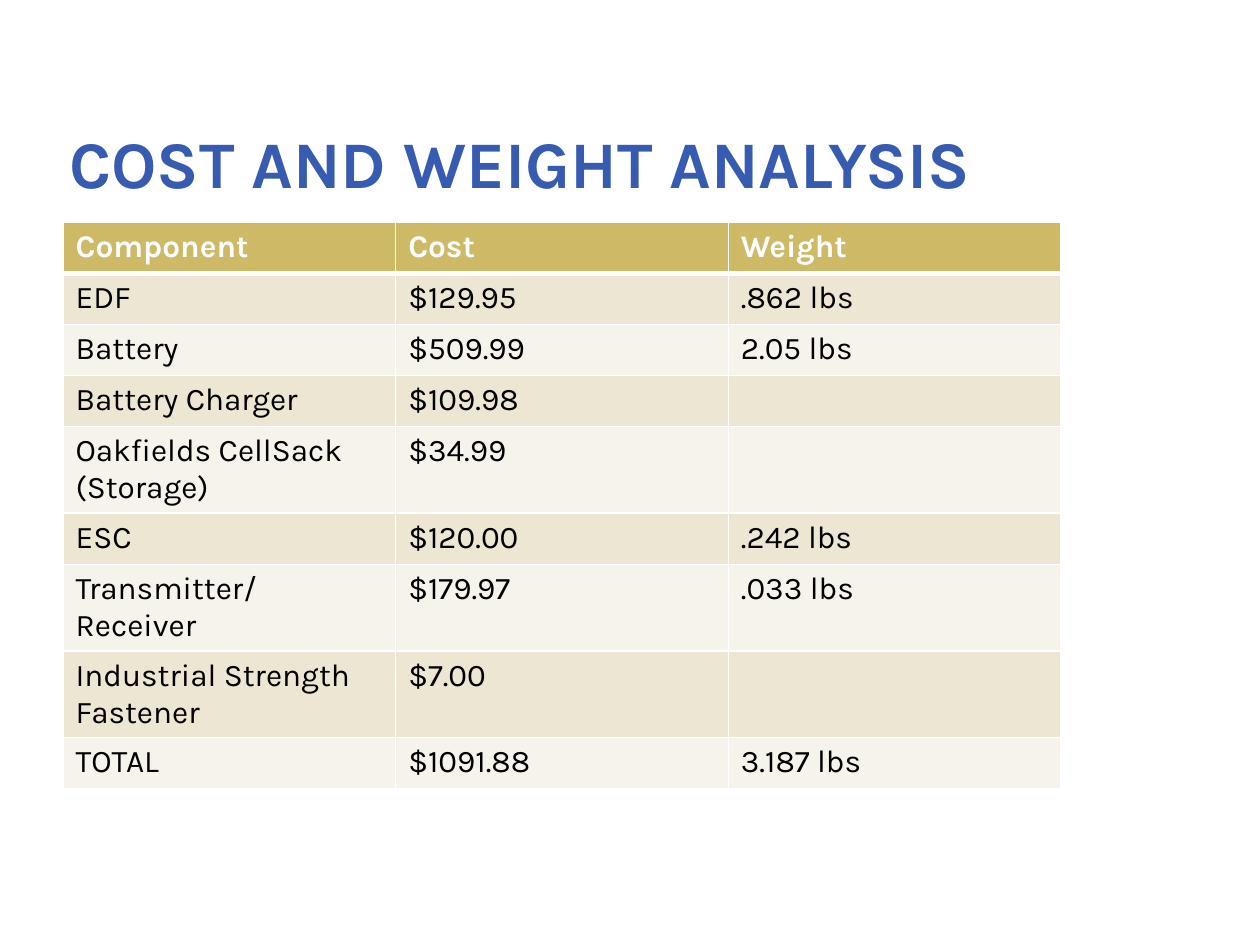
"""Build the cost and weight analysis slide."""
from lxml.etree import SubElement
from pptx import Presentation
from pptx.dml.color import RGBColor
from pptx.enum.text import MSO_ANCHOR as Anchor, MSO_AUTO_SIZE as AutoSize, PP_ALIGN as Align
from pptx.oxml.ns import qn
from pptx.util import Cm, Pt


def color(value):
    return RGBColor.from_string(value)


def write(frame, text, size=18, fill="000000", bold=False):
    para = frame.paragraphs[0]
    para.alignment = Align.LEFT
    span = para.add_run()
    span.text = text
    span.font.name = "Karla"
    span.font.size = Pt(size)
    span.font.bold = bold
    span.font.color.rgb = color(fill)


deck = Presentation()
deck.slide_width, deck.slide_height = Cm(25.4), Cm(19.05)
page = deck.slides.add_slide(deck.slide_layouts[5])

title = page.shapes.title
title.left, title.top, title.width, title.height = Cm(1.27), Cm(0.89), Cm(20.12), Cm(3.18)
frame = title.text_frame
frame.auto_size = AutoSize.NONE
frame.word_wrap = True
frame.vertical_anchor = Anchor.BOTTOM
frame.margin_left = frame.margin_right = Cm(0.13)
frame.margin_top = frame.margin_bottom = 0
write(frame, "COST AND WEIGHT ANALYSIS", size=38, fill="375BB0", bold=True)

rows = [
    ("Component", "Cost", "Weight"),
    ("EDF", "$129.95", ".862 lbs"),
    ("Battery", "$509.99", "2.05 lbs"),
    ("Battery Charger", "$109.98", ""),
    ("Oakfields CellSack (Storage)", "$34.99", ""),
    ("ESC", "$120.00", ".242 lbs"),
    ("Transmitter/ Receiver", "$179.97", ".033 lbs"),
    ("Industrial Strength Fastener", "$7.00", ""),
    ("TOTAL", "$1091.88", "3.187 lbs"),
]
row_height = Cm(1.03)
table = page.shapes.add_table(
    len(rows), 3, Cm(1.27), Cm(4.48), Cm(20.12), row_height * len(rows)
).table

for row_index, row in enumerate(rows):
    table.rows[row_index].height = row_height
    header = row_index == 0
    band = "CEB966" if header else ("F6F3EA", "EDE6D3")[row_index % 2]
    widths = {"L": 1, "R": 1, "T": 3 if row_index == 1 else 1, "B": 3 if header else 1}
    for column_index, text in enumerate(row):
        cell = table.cell(row_index, column_index)
        properties = cell._tc.get_or_add_tcPr()
        for side, width in widths.items():
            line = SubElement(properties, qn(f"a:ln{side}"), w=str(Pt(width)))
            SubElement(SubElement(line, qn("a:solidFill")), qn("a:srgbClr"), val="FFFFFF")
        cell.fill.solid()
        cell.fill.fore_color.rgb = color(band)
        if text:
            write(cell.text_frame, text, fill="FFFFFF" if header else "000000", bold=header)

deck.save("out.pptx")
